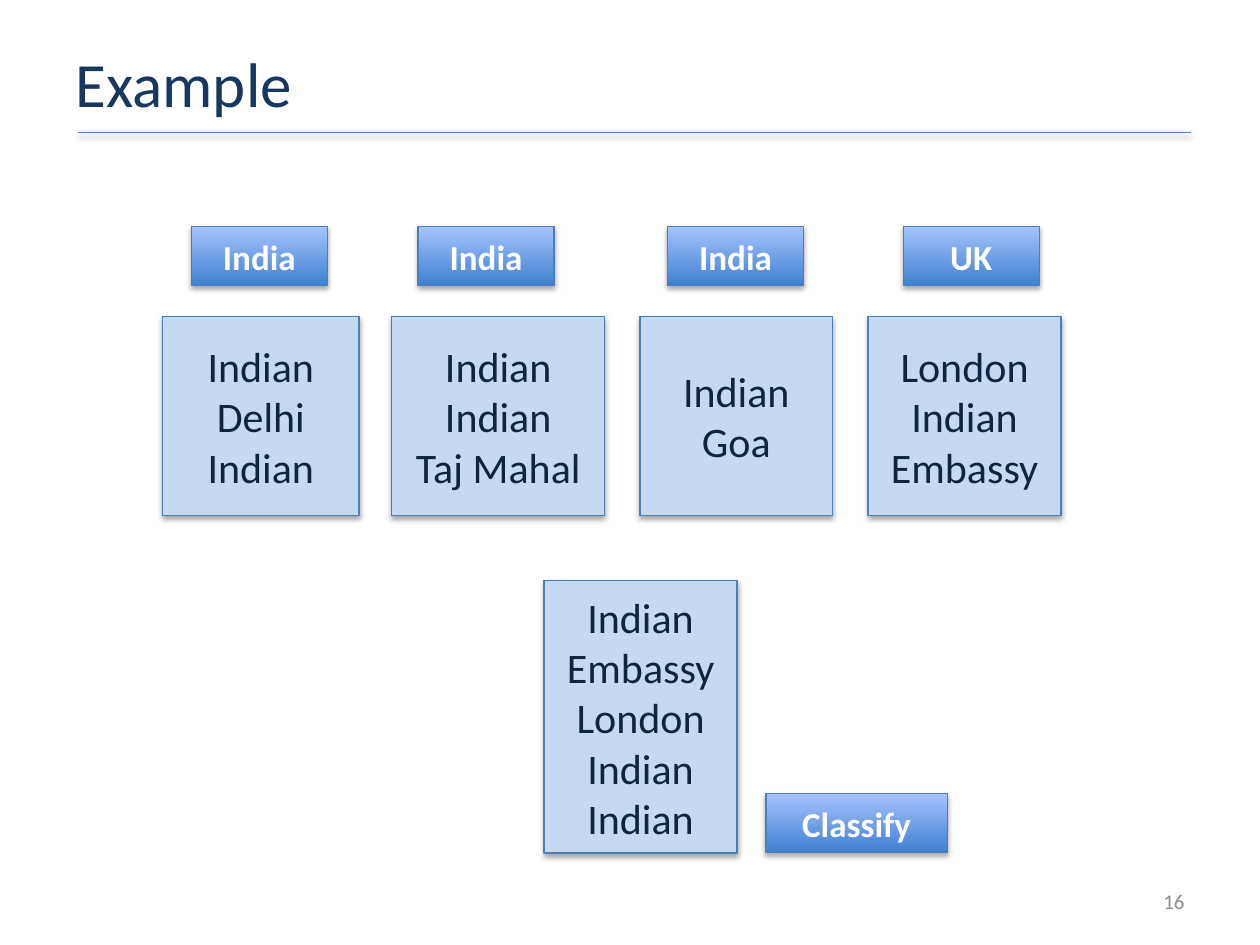
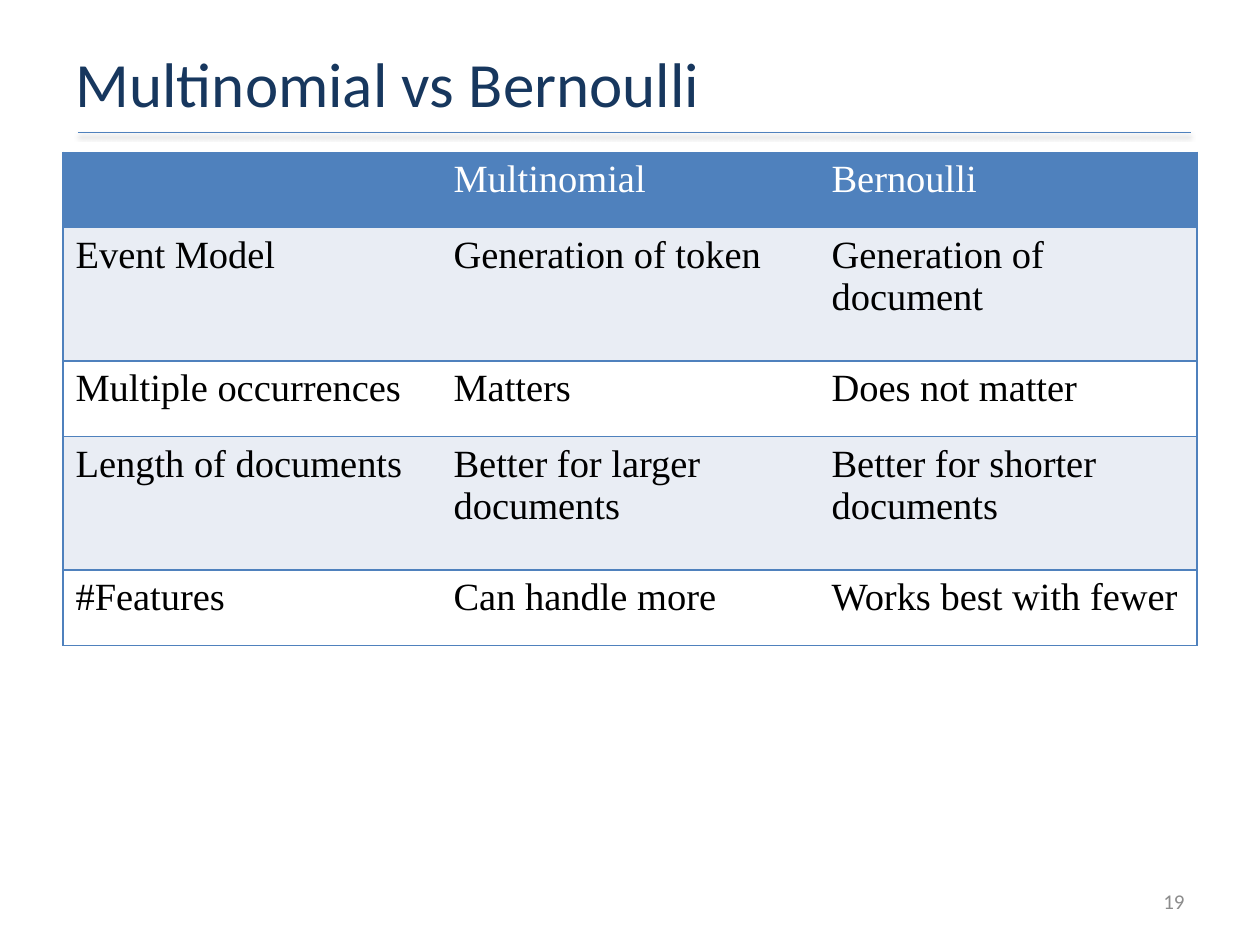
"""Build two lecture slides on naive Bayes text classification."""
from dataclasses import dataclass

import lxml.etree
import pptx
import pptx.dml.color
import pptx.enum.dml
import pptx.enum.shapes
import pptx.enum.text
import pptx.oxml.ns
import pptx.presentation
import pptx.shapes.base
import pptx.slide
import pptx.table
import pptx.text.text
import pptx.util

Cm = pptx.util.Cm
Pt = pptx.util.Pt
PP_ALIGN = pptx.enum.text.PP_ALIGN
MSO_ANCHOR = pptx.enum.text.MSO_ANCHOR
qn = pptx.oxml.ns.qn

COLORS = {
    "title": "17375E",
    "accent": "4F81BD",
    "number": "8C8C8C",
    "edge": "4B7EBC",
    "doc": "C6D9F1",
    "doc_text": "0F243E",
    "label_top": "A4C4FF",
    "label_bottom": "3F80CE",
    "band": "E9EDF4",
    "white": "FFFFFF",
    "black": "000000",
}
SANS = "Calibri"
SERIF = "Times New Roman"


@dataclass(frozen=True)
class Style:
    """Font settings of a run."""
    size: float
    color: str
    font: str = SANS
    bold: bool = False


@dataclass(frozen=True)
class Box:
    """A rectangle in centimetres with its lines of text."""
    left: float
    top: float
    width: float
    height: float
    lines: tuple[str, ...]
    is_label: bool = False


TITLE = Style(36, "title")
NUMBER = Style(12, "number")
DOC = Style(24, "doc_text")
LABEL = Style(20, "white", bold=True)
HEAD = Style(22, "white", SERIF)
BODY = Style(22, "black", SERIF)

DOC_TOP, DOC_H = 6.38, 4.01
LABEL_TOP, LABEL_W, LABEL_H = 4.57, 2.74, 1.19
TRAINING = [
    (3.28, 3.96, ("Indian", "Delhi", "Indian"), 3.86, "India"),
    (7.9, 4.29, ("Indian", "Indian", "Taj Mahal"), 8.43, "India"),
    (12.9, 3.89, ("Indian", "Goa"), 13.46, "India"),
    (17.5, 3.89, ("London", "Indian", "Embassy"), 18.21, "UK"),
]
TEST_DOC = Box(10.97, 11.71, 3.89, 5.49,
               ("Indian", "Embassy", "London", "Indian", "Indian"))
CLASSIFY = Box(15.44, 16, 3.66, LABEL_H, ("Classify",), True)

COL_W, ROW_H, TALL_ROW_H = 7.62, 1.52, 2.69
COMPARISON = [
    ("", "Multinomial", "Bernoulli"),
    ("Event Model", "Generation of token", "Generation of document"),
    ("Multiple occurrences", "Matters", "Does not matter"),
    ("Length of documents", "Better for larger documents",
     "Better for shorter documents"),
    ("#Features", "Can handle more", "Works best with fewer"),
]


def rgb(name: str) -> pptx.dml.color.RGBColor:
    """Look up a palette colour."""
    return pptx.dml.color.RGBColor.from_string(COLORS[name])


def write(tf: pptx.text.text.TextFrame, lines: tuple[str, ...], style: Style,
          align: PP_ALIGN = PP_ALIGN.LEFT) -> None:
    """Write one paragraph per line."""
    for i, line in enumerate(lines):
        p = tf.add_paragraph() if i else tf.paragraphs[0]
        p.alignment = align
        r = p.add_run()
        r.text = line
        r.font.size = Pt(style.size)
        r.font.name = style.font
        r.font.bold = style.bold
        r.font.color.rgb = rgb(style.color)


def add_shadow(sp: pptx.shapes.base.BaseShape, alpha: int, dist: float) -> None:
    """Give a shape or connector a soft shadow straight below it."""
    effects = lxml.etree.SubElement(sp._element.spPr, qn("a:effectLst"))
    shadow = lxml.etree.SubElement(
        effects, qn("a:outerShdw"), blurRad=str(Pt(3.1)), dist=str(Pt(dist)),
        dir="5400000", rotWithShape="0")
    color = lxml.etree.SubElement(shadow, qn("a:srgbClr"), val=COLORS["black"])
    lxml.etree.SubElement(color, qn("a:alpha"), val=str(alpha * 1000))


def add_box(slide: pptx.slide.Slide, box: Box) -> None:
    """Draw a document box or a gradient label."""
    sp = slide.shapes.add_shape(
        pptx.enum.shapes.MSO_SHAPE.RECTANGLE,
        Cm(box.left), Cm(box.top), Cm(box.width), Cm(box.height))
    if box.is_label:
        sp.fill.gradient()
        sp.fill.gradient_angle = 90
        for stop, name in zip(sp.fill.gradient_stops, ("label_bottom", "label_top")):
            stop.color.rgb = rgb(name)
    else:
        sp.fill.solid()
        sp.fill.fore_color.rgb = rgb("doc")
    sp.line.color.rgb = rgb("edge")
    sp.line.width = Pt(0.75)
    add_shadow(sp, 35, 1.8)
    tf = sp.text_frame
    tf.word_wrap = True
    tf.vertical_anchor = MSO_ANCHOR.MIDDLE
    write(tf, box.lines, LABEL if box.is_label else DOC, PP_ALIGN.CENTER)


def add_slide(prs: pptx.presentation.Presentation, title: str,
              number: int) -> pptx.slide.Slide:
    """Add a slide with its title, rule and number."""
    slide = prs.slides.add_slide(prs.slide_layouts.get_by_name("Title Only"))
    rule = slide.shapes.add_connector(
        pptx.enum.shapes.MSO_CONNECTOR.STRAIGHT, Cm(1.57), Cm(2.67), Cm(24), Cm(2.67))
    rule.line.color.rgb = rgb("accent")
    rule.line.width = Pt(1)
    add_shadow(rule, 38, 1.6)

    sp = slide.shapes.title
    sp.left, sp.top, sp.width, sp.height = Cm(1.27), Cm(0.76), Cm(22.86), Cm(1.8)
    sp.text_frame.auto_size = pptx.enum.text.MSO_AUTO_SIZE.NONE
    sp.text_frame.vertical_anchor = MSO_ANCHOR.MIDDLE
    write(sp.text_frame, (title,), TITLE)

    tf = slide.shapes.add_textbox(Cm(18.21), Cm(17.65), Cm(5.92), Cm(1.02)).text_frame
    tf.word_wrap = True
    tf.vertical_anchor = MSO_ANCHOR.MIDDLE
    write(tf, (str(number),), NUMBER, PP_ALIGN.RIGHT)
    return slide


def set_borders(cell: pptx.table._Cell, sides: str) -> None:
    """Draw the named sides of a cell and clear the others."""
    tc_pr = cell._tc.get_or_add_tcPr()
    for side in "LRTB":
        ln = lxml.etree.SubElement(tc_pr, qn(f"a:ln{side}"), w=str(Pt(1)))
        if side in sides:
            fill = lxml.etree.SubElement(ln, qn("a:solidFill"))
            lxml.etree.SubElement(fill, qn("a:srgbClr"), val=COLORS["accent"])
        else:
            lxml.etree.SubElement(ln, qn("a:noFill"))


def add_comparison(slide: pptx.slide.Slide) -> None:
    """Draw the banded table comparing the two models."""
    heights = [TALL_ROW_H if i % 2 else ROW_H for i in range(len(COMPARISON))]
    n_cols = len(COMPARISON[0])
    table = slide.shapes.add_table(
        len(COMPARISON), n_cols, Cm(1.27), Cm(3.07),
        Cm(COL_W * n_cols), Cm(sum(heights))).table
    table.first_row = table.horz_banding = False
    for col in table.columns:
        col.width = Cm(COL_W)
    for i, (texts, height) in enumerate(zip(COMPARISON, heights)):
        table.rows[i].height = Cm(height)
        fill = "accent" if i == 0 else "band" if i % 2 else "white"
        for j, text in enumerate(texts):
            cell = table.cell(i, j)
            set_borders(cell, "TB" + {0: "L", n_cols - 1: "R"}.get(j, ""))
            cell.fill.solid()
            cell.fill.fore_color.rgb = rgb(fill)
            if text:
                write(cell.text_frame, (text,), BODY if i else HEAD)


def main() -> None:
    """Build and save the slides."""
    prs = pptx.Presentation()
    prs.slide_width, prs.slide_height = Cm(25.4), Cm(19.05)

    example = add_slide(prs, "Example", 16)
    for left, width, words, label_left, label in TRAINING:
        add_box(example, Box(left, DOC_TOP, width, DOC_H, words))
        add_box(example, Box(label_left, LABEL_TOP, LABEL_W, LABEL_H, (label,), True))
    add_box(example, TEST_DOC)
    add_box(example, CLASSIFY)

    add_comparison(add_slide(prs, "Multinomial vs Bernoulli", 19))
    prs.save("out.pptx")


if __name__ == "__main__":
    main()
